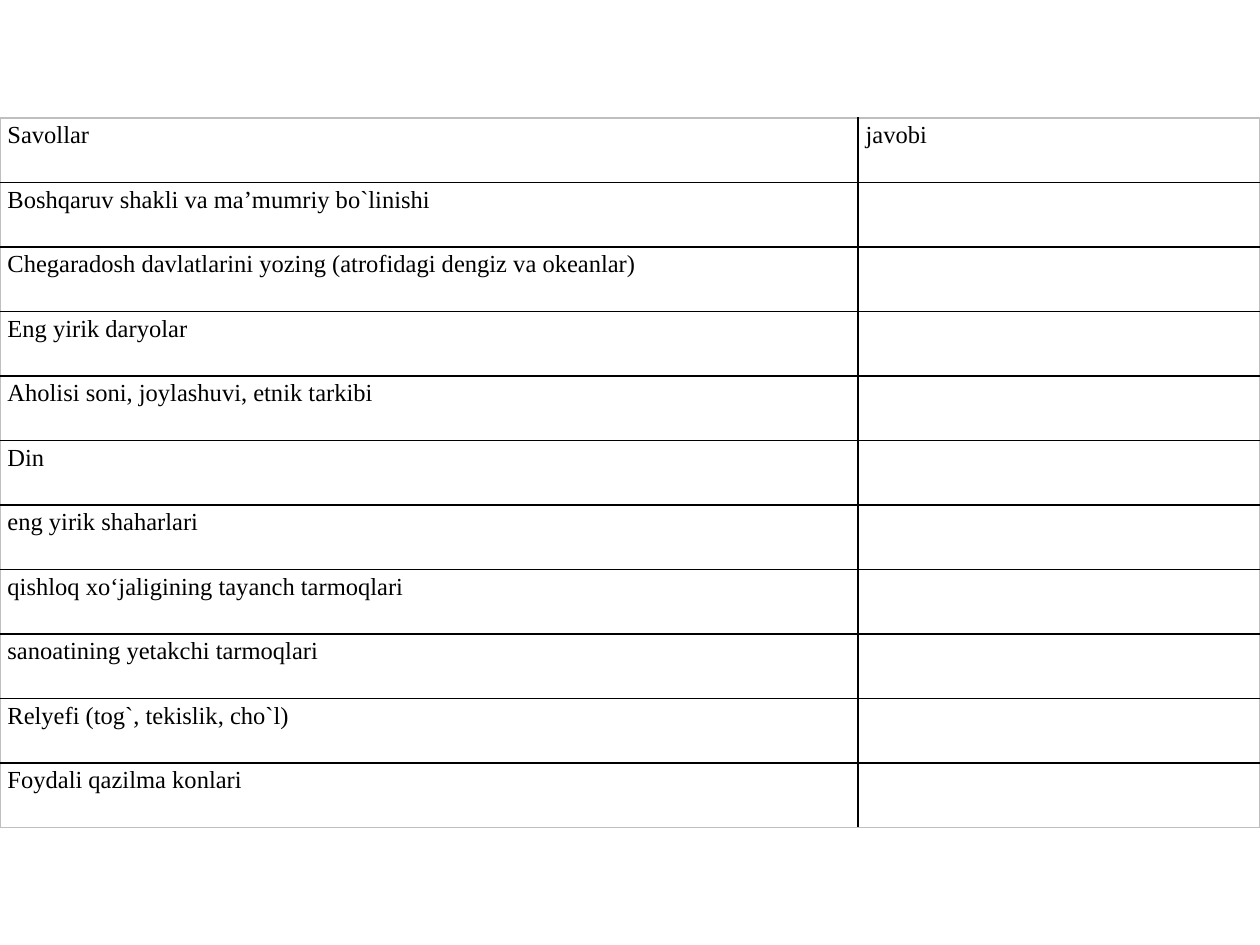
from pptx import Presentation
from pptx.dml.color import RGBColor
from pptx.oxml.ns import qn
from pptx.util import Cm, Pt
from lxml.etree import SubElement

INK, EDGE, PAPER = "000000", "BFBFBF", "FFFFFF"
FONT = {"name": "Times New Roman", "size": Pt(14), "bold": False}
PAD = {"margin_left": Cm(0.15), "margin_right": Cm(0.15),
       "margin_top": Cm(0.08), "margin_bottom": Cm(0.08)}
HEADS = ["Savollar", "javobi"]
ASKS = [
    "Boshqaruv shakli va ma’mumriy bo`linishi",
    "Chegaradosh davlatlarini yozing (atrofidagi dengiz va okeanlar)",
    "Eng yirik daryolar",
    "Aholisi soni, joylashuvi, etnik tarkibi",
    "Din",
    "eng yirik shaharlari",
    "qishloq xo‘jaligining tayanch tarmoqlari",
    "sanoatining yetakchi tarmoqlari",
    "Relyefi (tog`, tekislik, cho`l)",
    "Foydali qazilma konlari",
]


def tint(code):
    return RGBColor.from_string(code)


def apply(item, style):
    for key, value in style.items():
        setattr(item, key, value)


def rule(cell, side, code):
    """Draw one border of a cell; call in the order L, R, T, B."""
    line = SubElement(cell._tc.get_or_add_tcPr(), qn("a:ln" + side), w=str(Pt(1)))
    fill = SubElement(line, qn("a:solidFill"))
    SubElement(fill, qn("a:srgbClr"), val=code)


def dress(cell, text, outer):
    apply(cell, PAD)
    for side in "LRTB":
        rule(cell, side, EDGE if outer[side] else INK)
    cell.fill.solid()
    cell.fill.fore_color.rgb = tint(PAPER)
    cell.text = text
    font = cell.text_frame.paragraphs[0].font
    apply(font, FONT)
    font.color.rgb = tint(INK)


def add_grid(slide, left, top, width, height):
    data = [HEADS] + [[ask, ""] for ask in ASKS]
    last = len(data) - 1
    grid = slide.shapes.add_table(len(data), 2, left, top, width, height).table
    grid.first_row = grid.horz_banding = False
    split = Cm(17.3)
    grid.columns[0].width = split
    grid.columns[1].width = width - split
    for r, row in enumerate(data):
        for c, text in enumerate(row):
            outer = {"L": c == 0, "R": c == 1, "T": r == 0, "B": r == last}
            dress(grid.cell(r, c), text, outer)


def main():
    deck = Presentation()
    deck.slide_width, deck.slide_height = Cm(25.4), Cm(19.05)
    slide = deck.slides.add_slide(deck.slide_layouts[6])
    add_grid(slide, 0, Cm(2.38), deck.slide_width, Cm(14.3))
    deck.save("out.pptx")


if __name__ == "__main__":
    main()
